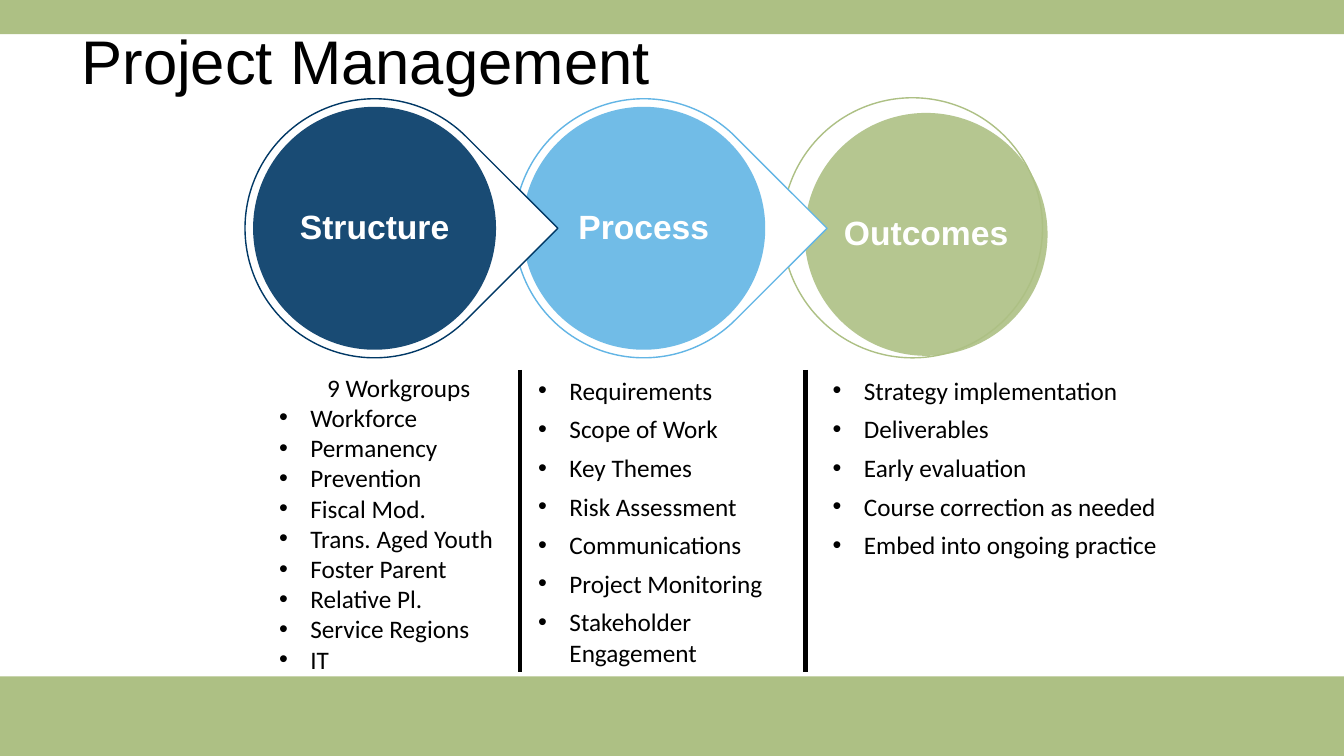
from dataclasses import dataclass
from typing import Optional

from lxml.etree import SubElement
from pptx import Presentation
from pptx.dml.color import RGBColor
from pptx.enum.shapes import MSO_CONNECTOR as Connector, MSO_SHAPE as Shape
from pptx.enum.text import MSO_ANCHOR as Anchor, PP_ALIGN as Align
from pptx.oxml.ns import qn
from pptx.util import Inches, Pt

GREEN, BLUE, NAVY = "ADC084", "62B5E5", "003865"
WHITE, BLACK = "FFFFFF", "000000"
DISC_SIZE = 2.41
LABEL_SIZE = 1.72
TITLE_FONT = {"name": "Arial", "size": Pt(44)}
LABEL_FONT = {"name": "Arial", "size": Pt(24), "bold": True}
LIST_FONT = {"name": "Calibri", "size": Pt(18)}


@dataclass
class Stage:
    label: str
    color: str
    outline: Shape
    outline_box: tuple[float, float, float]  # left, top, size
    disc_left: float
    disc_top: float


@dataclass
class Column:
    left: float
    top: float
    width: float
    height: float
    items: list[str]
    align: Align = Align.LEFT
    space_after: int = 6
    heading: Optional[str] = None


# Stages from back to front
STAGES = [
    Stage("Outcomes", GREEN, Shape.OVAL, (7.76, 0.97, 2.58), 7.98, 1.12),
    Stage("Process", BLUE, Shape.TEAR, (5.1, 0.98, 2.57), 5.18, 1.06),
    Stage("Structure", NAVY, Shape.TEAR, (2.43, 0.98, 2.57), 2.51, 1.06),
]
COLUMNS = [
    Column(2.67, 3.64, 2.57, 3.1,
           ["Workforce", "Permanency", "Prevention", "Fiscal Mod.", "Trans. Aged Youth",
            "Foster Parent", "Relative Pl.", "Service Regions", "IT"],
           space_after=0, heading="9 Workgroups"),
    Column(5.24, 3.67, 2.57, 3.03,
           ["Requirements", "Scope of Work", "Key Themes", "Risk Assessment",
            "Communications", "Project Monitoring", "Stakeholder Engagement"],
           align=Align.JUSTIFY),
    Column(8.16, 3.67, 3.69, 1.95,
           ["Strategy implementation", "Deliverables", "Early evaluation",
            "Course correction as needed", "Embed into ongoing practice"]),
]
DIVIDERS = [5.16, 7.99]


def rgb(color: str) -> RGBColor:
    return RGBColor.from_string(color)


def add_filled(slide, kind, left: float, top: float, width: float, height: float,
               fill: str, line: Optional[str] = None, opacity: int = 100):
    shape = slide.shapes.add_shape(kind, *map(Inches, (left, top, width, height)))
    shape.shadow.inherit = False
    shape.fill.solid()
    shape.fill.fore_color.rgb = rgb(fill)
    if opacity < 100:
        color = shape.fill._xPr.find(qn("a:solidFill"))[0]
        SubElement(color, qn("a:alpha"), val=str(opacity * 1000))
    if line:
        shape.line.color.rgb = rgb(line)
        shape.line.width = Pt(1)
    else:
        shape.line.fill.background()
    return shape


def add_frame(slide, left: float, top: float, width: float, height: float,
              anchor=Anchor.TOP, margin: Optional[float] = None):
    frame = slide.shapes.add_textbox(*map(Inches, (left, top, width, height))).text_frame
    frame.word_wrap = True
    frame.vertical_anchor = anchor
    if margin is not None:
        for side in ("left", "right", "top", "bottom"):
            setattr(frame, f"margin_{side}", Inches(margin))
    return frame


def write(paragraph, text: str, font: dict, color: str, **layout) -> None:
    for name, value in layout.items():
        setattr(paragraph, name, value)
    run = paragraph.add_run()
    run.text = text
    for name, value in font.items():
        setattr(run.font, name, value)
    run.font.color.rgb = rgb(color)


def add_bullet(paragraph) -> None:
    properties = paragraph._p.get_or_add_pPr()
    properties.set("marL", str(Inches(0.31)))
    properties.set("indent", str(-Inches(0.31)))
    SubElement(properties, qn("a:buFont"), typeface="Arial")
    SubElement(properties, qn("a:buChar"), char="•")


def draw_stage(slide, stage: Stage) -> None:
    left, top, size = stage.outline_box
    outline = add_filled(slide, stage.outline, left, top, size, size, WHITE, stage.color)
    if stage.outline == Shape.TEAR:
        outline.adjustments[0] = 1
        outline.rotation = 45
    add_filled(slide, Shape.OVAL, stage.disc_left, stage.disc_top,
               DISC_SIZE, DISC_SIZE, stage.color, opacity=90)
    inset = (DISC_SIZE - LABEL_SIZE) / 2
    frame = add_frame(slide, stage.disc_left + inset, stage.disc_top + inset,
                      LABEL_SIZE, LABEL_SIZE, Anchor.MIDDLE, 0.03)
    write(frame.paragraphs[0], stage.label, LABEL_FONT, WHITE,
          alignment=Align.CENTER, line_spacing=0.9)


def draw_column(slide, column: Column) -> None:
    frame = add_frame(slide, column.left, column.top, column.width, column.height)
    paragraph = frame.paragraphs[0]
    if column.heading:
        write(paragraph, column.heading, LIST_FONT, BLACK, alignment=Align.CENTER)
        paragraph = frame.add_paragraph()
    for index, item in enumerate(column.items):
        if index:
            paragraph = frame.add_paragraph()
        add_bullet(paragraph)
        write(paragraph, item, LIST_FONT, BLACK, alignment=column.align,
              space_after=Pt(column.space_after))


def draw_divider(slide, x: float) -> None:
    line = slide.shapes.add_connector(
        Connector.STRAIGHT, *map(Inches, (x, 3.67, x, 6.67)))
    line.line.color.rgb = rgb(BLACK)
    line.line.width = Pt(3)
    SubElement(line._element.spPr, qn("a:effectLst"))


def main() -> None:
    presentation = Presentation()
    presentation.slide_width = Inches(13.33)
    presentation.slide_height = Inches(7.5)
    slide = presentation.slides.add_slide(presentation.slide_layouts[6])

    # Bands and title
    add_filled(slide, Shape.RECTANGLE, 0, 6.71, 13.33, 0.79, GREEN)
    add_filled(slide, Shape.RECTANGLE, 0, 0, 13.33, 0.34, GREEN)
    title = add_frame(slide, 0.71, 0.19, 11.5, 0.9, Anchor.MIDDLE)
    write(title.paragraphs[0], "Project Management", TITLE_FONT, BLACK, line_spacing=0.9)

    # Chain of stages
    for stage in STAGES:
        draw_stage(slide, stage)

    # Lists and the lines between them
    for x in DIVIDERS:
        draw_divider(slide, x)
    for column in COLUMNS:
        draw_column(slide, column)

    presentation.save("out.pptx")


if __name__ == "__main__":
    main()
